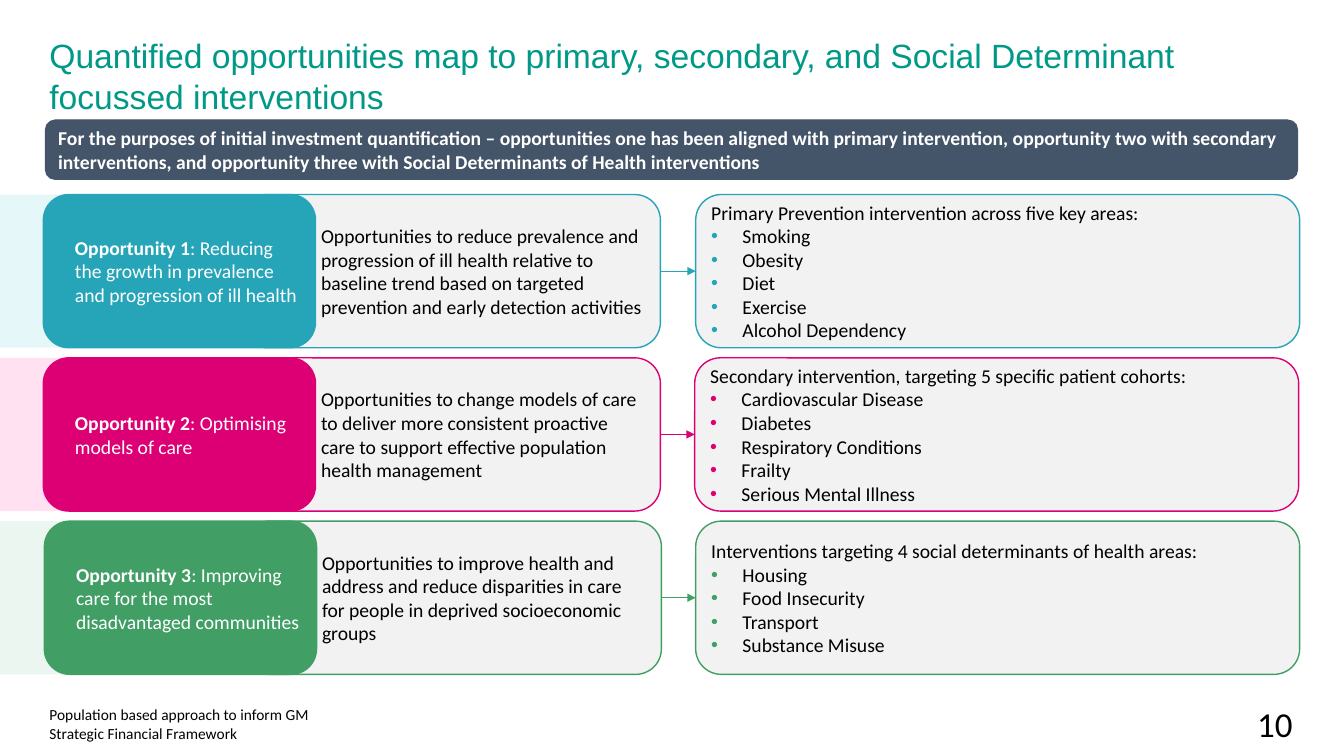
from lxml.etree import SubElement
from pptx import Presentation
from pptx.dml.color import RGBColor
from pptx.enum.shapes import MSO_CONNECTOR, MSO_SHAPE
from pptx.enum.text import MSO_ANCHOR, PP_ALIGN
from pptx.oxml.ns import qn
from pptx.util import Pt

TITLE = ("Quantified opportunities map to primary, secondary, and Social Determinant "
         "focussed interventions")
BANNER = ("For the purposes of initial investment quantification – opportunities one has been "
          "aligned with primary intervention, opportunity two with secondary interventions, and "
          "opportunity three with Social Determinants of Health interventions")
FOOTER = "Population based approach to inform GM Strategic Financial Framework"
PAGE_NUMBER = "10"

OPPORTUNITIES = [
    dict(name="Opportunity 1", aim=": Reducing the growth in prevalence and progression of ill health",
         detail="Opportunities to reduce prevalence and progression of ill health relative to "
                "baseline trend based on targeted prevention and early detection activities",
         heading="Primary Prevention intervention across five key areas:",
         areas=["Smoking", "Obesity", "Diet", "Exercise", "Alcohol Dependency"],
         color="teal", tint="pale teal", left=43, target_left=690),
    dict(name="Opportunity 2", aim=": Optimising models of care",
         detail="Opportunities to change models of care to deliver more consistent proactive "
                "care to support effective population health management",
         heading="Secondary intervention, targeting 5 specific patient cohorts:",
         areas=["Cardiovascular Disease", "Diabetes", "Respiratory Conditions", "Frailty",
                "Serious Mental Illness"],
         color="pink", tint="pale pink", left=43, target_left=689),
    dict(name="Opportunity 3", aim=": Improving care for the most disadvantaged communities",
         detail="Opportunities to improve health and address and reduce disparities in care "
                "for people in deprived socioeconomic groups",
         heading="Interventions targeting 4 social determinants of health areas:",
         areas=["Housing", "Food Insecurity", "Transport", "Substance Misuse"],
         color="green", tint="pale green", left=44, target_left=690),
]

COLORS = {
    "title": "009987", "banner": "445469", "panel": "F2F2F2",
    "black": "000000", "white": "FFFFFF",
    "teal": "26A5B8", "pink": "DD0075", "green": "419F65",
    "pale teal": "CFF0F5", "pale pink": "FFC5E4", "pale green": "D6EEE0",
}

PX = 9144  # EMU per px, 100 px to the inch
ROW_TOP, ROW_STEP, ROW_HEIGHT = 193, 162, 152
NAME_WIDTH, DETAIL_OFFSET, DETAIL_WIDTH, TARGET_WIDTH = 270, 197, 415, 599
BULLET_INDENT = 31


def rgb(name):
    return RGBColor.from_string(COLORS[name])


def set_frame(shape, insets, anchor=MSO_ANCHOR.MIDDLE):
    frame = shape.text_frame
    frame.word_wrap = True
    frame.vertical_anchor = anchor
    (frame.margin_left, frame.margin_top,
     frame.margin_right, frame.margin_bottom) = [inset * PX for inset in insets]
    return frame


def style(para, size, color, font="Calibri", bold=False, align=PP_ALIGN.LEFT):
    para.alignment = align
    para.font.size = Pt(size)
    para.font.name = font
    para.font.bold = bold
    para.font.color.rgb = rgb(color)


def add_label(page, area, text, size, color="black", anchor=MSO_ANCHOR.MIDDLE, **options):
    box = page.shapes.add_textbox(*[value * PX for value in area])
    para = set_frame(box, (4, 4, 4, 4), anchor).paragraphs[0]
    para.text = text
    style(para, size, color, **options)


def add_block(page, area, fill, line=None, width=1, kind=MSO_SHAPE.ROUNDED_RECTANGLE):
    block = page.shapes.add_shape(kind, *[value * PX for value in area])
    block.shadow.inherit = False
    block.fill.solid()
    block.fill.fore_color.rgb = rgb(fill)
    if line:
        block.line.color.rgb = rgb(line)
        block.line.width = Pt(width)
    else:
        block.line.fill.background()
    return block


def add_bullet(para, color):
    properties = para._p.get_or_add_pPr()
    properties.set("marL", str(BULLET_INDENT * PX))
    properties.set("indent", str(-BULLET_INDENT * PX))
    SubElement(SubElement(properties, qn("a:buClr")), qn("a:srgbClr"), val=COLORS[color])
    SubElement(properties, qn("a:buFont"), typeface="Arial")
    SubElement(properties, qn("a:buChar"), char="•")


def add_arrow(page, source, target, color):
    """Join the right side of source to the left side of target."""
    arrow = page.shapes.add_connector(MSO_CONNECTOR.STRAIGHT, 0, 0, 0, 0)
    arrow.begin_connect(source, 3)
    arrow.end_connect(target, 1)
    arrow.line.color.rgb = rgb(color)
    arrow.line.width = Pt(0.5)
    SubElement(arrow.line._get_or_add_ln(), qn("a:tailEnd"), type="triangle")
    SubElement(arrow._element.spPr, qn("a:effectLst"))


def add_row(page, top, item):
    color, left = item["color"], item["left"]

    strip = add_block(page, (0, top, left + 65, ROW_HEIGHT), item["tint"], kind=MSO_SHAPE.RECTANGLE)
    tint = strip._element.spPr.find(qn("a:solidFill")).find(qn("a:srgbClr"))
    SubElement(tint, qn("a:alpha"), val="50000")

    detail = add_block(page, (left + DETAIL_OFFSET, top, DETAIL_WIDTH, ROW_HEIGHT), "panel", color)
    para = set_frame(detail, (71, 8, 8, 8)).paragraphs[0]
    para.text = item["detail"]
    para.space_after = Pt(6)
    style(para, 14, "black")

    name = add_block(page, (left, top, NAME_WIDTH, ROW_HEIGHT), color, color)
    para = set_frame(name, (24, 8, 8, 8)).paragraphs[0]
    style(para, 14, "white")
    for text, bold in ((item["name"], True), (item["aim"], False)):
        span = para.add_run()
        span.text = text
        span.font.bold = bold

    target = add_block(page, (item["target_left"], top, TARGET_WIDTH, ROW_HEIGHT), "panel", color)
    frame = set_frame(target, (8, 8, 8, 8))
    frame.text = "\n".join([item["heading"], *item["areas"]])
    for index, para in enumerate(frame.paragraphs):
        if index:
            add_bullet(para, color)
        style(para, 14, "black")

    add_arrow(page, detail, target, color)


def main():
    deck = Presentation()
    deck.slide_width, deck.slide_height = 1333 * PX, 750 * PX
    page = deck.slides.add_slide(deck.slide_layouts[6])

    add_label(page, (45, 31, 1244, 88), TITLE, 24, "title", MSO_ANCHOR.TOP, font="Arial")
    banner = add_block(page, (45, 119, 1242, 59), "banner", "banner", 0.75)
    para = set_frame(banner, (10, 5, 10, 5)).paragraphs[0]
    para.text = BANNER
    style(para, 14, "white", bold=True)

    for index, item in enumerate(OPPORTUNITIES):
        add_row(page, ROW_TOP + index * ROW_STEP, item)

    add_label(page, (45, 698, 268, 40), FOOTER, 11)
    add_label(page, (1209, 698, 77, 40), PAGE_NUMBER, 25, align=PP_ALIGN.RIGHT)
    deck.save("out.pptx")


if __name__ == "__main__":
    main()
